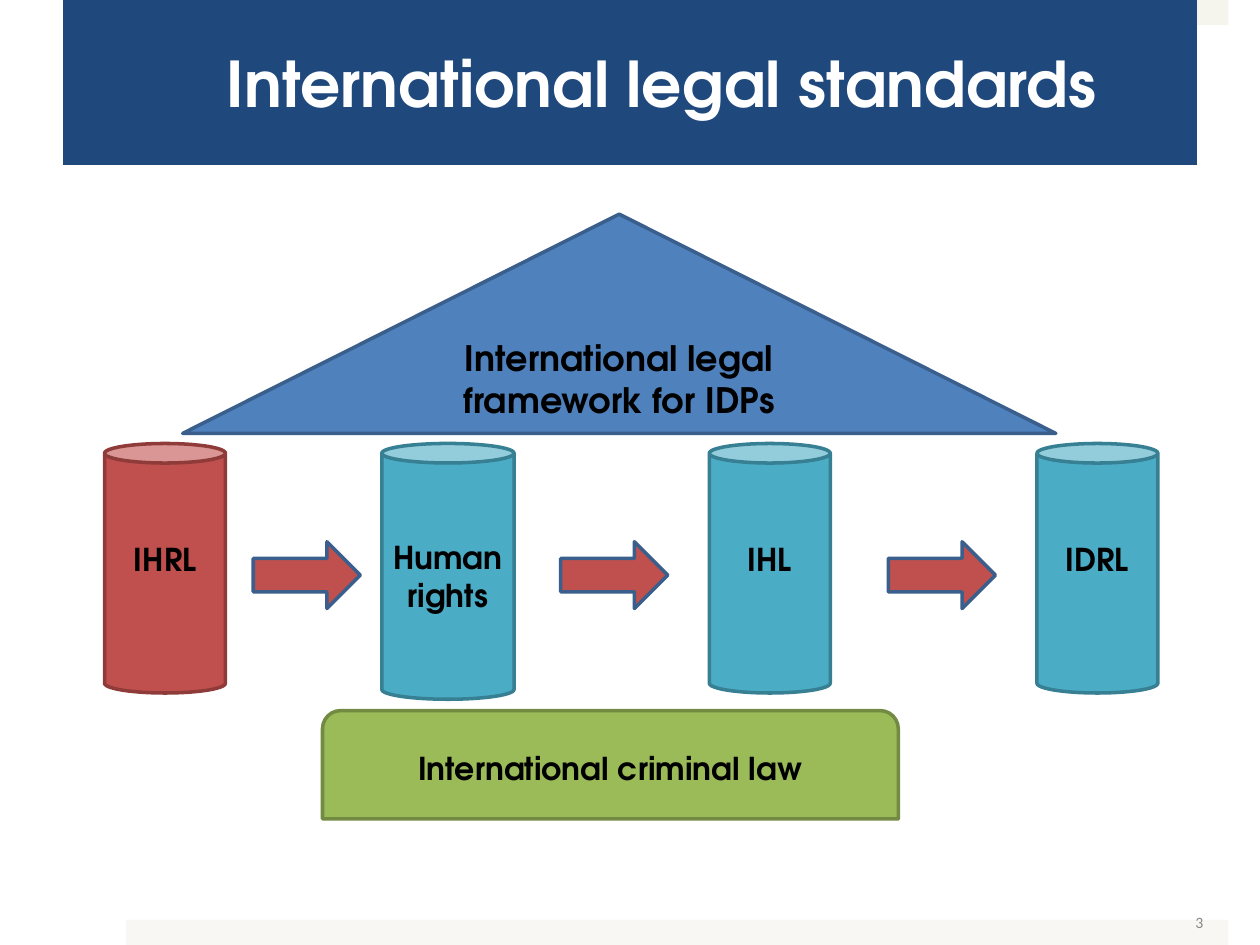
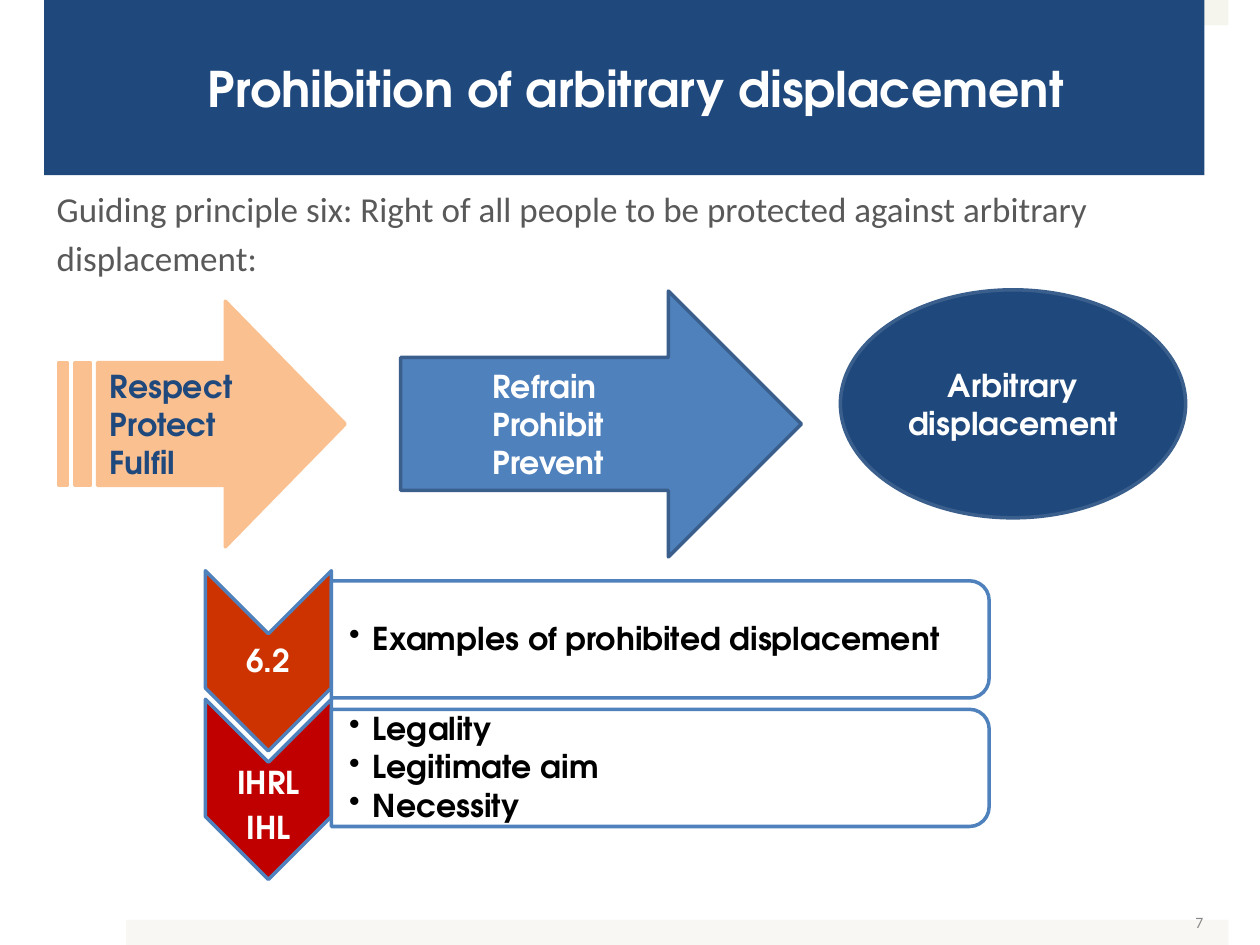
from lxml import etree
from pptx import Presentation
from pptx.dml.color import RGBColor
from pptx.enum.shapes import MSO_SHAPE
from pptx.enum.text import MSO_ANCHOR, MSO_AUTO_SIZE, PP_ALIGN
from pptx.oxml.ns import qn
from pptx.util import Inches, Pt

LEFT, CENTER, RIGHT = PP_ALIGN.LEFT, PP_ALIGN.CENTER, PP_ALIGN.RIGHT
MIDDLE = MSO_ANCHOR.MIDDLE
NO_FIT = MSO_AUTO_SIZE.NONE
RECT, CAN, ROOF = MSO_SHAPE.RECTANGLE, MSO_SHAPE.CAN, MSO_SHAPE.ISOSCELES_TRIANGLE
ROUND_TOP, CHEVRON = MSO_SHAPE.ROUND_2_SAME_RECTANGLE, MSO_SHAPE.CHEVRON
ARROW, STRIPED = MSO_SHAPE.RIGHT_ARROW, MSO_SHAPE.STRIPED_RIGHT_ARROW
OVAL = MSO_SHAPE.OVAL

HEADING_FONT, BODY_FONT = "TeX Gyre Adventor", "Calibri"
WHITE, BLACK = RGBColor(255, 255, 255), RGBColor(0, 0, 0)
NAVY, BLUE, BLUE_EDGE = (RGBColor.from_string(c) for c in ("1F497D", "4F81BD", "3A5F8C"))
TEAL, TEAL_EDGE = RGBColor.from_string("4BACC6"), RGBColor.from_string("377F92")
RED, RED_EDGE = RGBColor.from_string("C0504D"), RGBColor.from_string("8E3B39")
GREEN, GREEN_EDGE = RGBColor.from_string("9BBB59"), RGBColor.from_string("738A42")
PEACH = RGBColor.from_string("FAC090")
ORANGE, CRIMSON = RGBColor.from_string("CC3300"), RGBColor.from_string("C00000")
BODY_GREY, NUMBER_GREY = RGBColor.from_string("595959"), RGBColor.from_string("898989")

BANDS = [((1, 0, 8.75, 0.2), RGBColor.from_string("F5F4ED")),
         ((1, 7.3, 8.75, 0.2), RGBColor.from_string("F8F7F3"))]
NUMBER_BOX = (7.29, 7.12, 2.33, 0.4)

STANDARDS = {"title": "International legal standards", "number": "3",
             "box": (0.5, 0, 9, 1.31), "size": 36}
PROHIBITION = {"title": "Prohibition of arbitrary displacement", "number": "7",
               "box": (0.35, 0, 9.21, 1.39), "size": 28}

FRAMEWORK = ["International legal", "framework for IDPs"]
FOUNDATION = ["International criminal law"]
PILLARS = [
    (["IHRL"], 0.83, 0.96, 1.98, 0.27, RED, RED_EDGE),
    (["Human", "rights"], 3.03, 1.05, 2.03, 0.05, TEAL, TEAL_EDGE),
    (["IHL"], 5.63, 0.96, 1.98, 0.27, TEAL, TEAL_EDGE),
    (["IDRL"], 8.23, 0.96, 1.98, 0.27, TEAL, TEAL_EDGE),
]
PILLAR_TOP, PILLAR_RIM = 3.52, 0.155
STEP_LEFTS = [2.01, 4.45, 7.05]

PRINCIPLE = ("Guiding principle six: Right of all people to be protected "
             "against arbitrary displacement:")
DUTIES = ["Respect", "Protect", "Fulfil"]
ACTIONS = ["Refrain", "Prohibit", "Prevent"]
HARM = ["Arbitrary displacement"]
SOURCES = [
    (["6.2"], 5.04, ORANGE, ["Examples of prohibited displacement"]),
    (["IHRL", "IHL"], 6.19, CRIMSON, ["Legality", "Legitimate aim", "Necessity"]),
]
SOURCE_TOP, SOURCE_PITCH = 4.53, 1.02


def inches(box):
    return [Inches(value) for value in box]


def write(frame, lines, size, color, align=CENTER, font=HEADING_FONT, bold=True,
          spacing=None, after=0, bullet=False):
    frame.text = "\n".join(lines)
    frame.vertical_anchor = MIDDLE
    for paragraph in frame.paragraphs:
        if bullet:
            properties = paragraph._p.get_or_add_pPr()
            properties.set("marL", str(Inches(0.19)))
            properties.set("indent", str(-Inches(0.19)))
            etree.SubElement(properties, qn("a:buChar")).set("char", "•")
        paragraph.alignment = align
        paragraph.space_after = Pt(after)
        if spacing:
            paragraph.line_spacing = spacing
        for run in paragraph.runs:
            run.font.name, run.font.size, run.font.bold = font, Pt(size), bold
            run.font.color.rgb = color


def set_margins(frame, left, top, right, bottom):
    frame.margin_left, frame.margin_top = Inches(left), Inches(top)
    frame.margin_right, frame.margin_bottom = Inches(right), Inches(bottom)


def add_figure(slide, kind, box, fill, edge=None, adjustments=()):
    figure = slide.shapes.add_shape(kind, *inches(box))
    figure.shadow.inherit = False
    figure.fill.solid()
    figure.fill.fore_color.rgb = fill
    if edge is None:
        figure.line.fill.background()
    else:
        figure.line.color.rgb = edge
        figure.line.width = Pt(2)
    for index, value in enumerate(adjustments):
        figure.adjustments[index] = value
    return figure


def add_turned(slide, kind, box, fill, edge):
    """Add a shape turned a quarter clockwise that fills the box as seen."""
    left, top, width, height = box
    shift = (width - height) / 2
    figure = add_figure(slide, kind, (left + shift, top - shift, height, width), fill, edge)
    figure.rotation = 90
    return figure


def add_label(slide, box, margins, lines, size, color, **style):
    frame = slide.shapes.add_textbox(*inches(box)).text_frame
    frame.word_wrap = True
    set_margins(frame, *margins)
    write(frame, lines, size, color, **style)


def place(placeholder, box):
    placeholder.left, placeholder.top, placeholder.width, placeholder.height = inches(box)
    placeholder.text_frame.auto_size = NO_FIT


def add_bands(slide):
    """Move the two pale bands to the back of the slide master."""
    master = slide.slide_layout.slide_master.shapes.element
    for order, (box, color) in enumerate(BANDS):
        band = add_figure(slide, RECT, box, color).element
        band.nvSpPr.cNvPr.set("id", str(100 + order))
        master.insert(2 + order, band)


def start_slide(deck, layout_index, heading):
    slide = deck.slides.add_slide(deck.slide_layouts[layout_index])
    title = slide.shapes.title
    place(title, heading["box"])
    title.fill.solid()
    title.fill.fore_color.rgb = NAVY
    set_margins(title.text_frame, 1.3, 0.05, 0.3, 0.05)
    write(title.text_frame, [heading["title"]], heading["size"], WHITE, LEFT)
    add_label(slide, NUMBER_BOX, (0.07, 0.04, 0.07, 0.04), [heading["number"]], 9,
              NUMBER_GREY, align=RIGHT, font=BODY_FONT, bold=False)
    return slide


def build_standards(deck):
    slide = start_slide(deck, 5, STANDARDS)
    add_bands(slide)
    roof = add_figure(slide, ROOF, (1.45, 1.7, 6.93, 1.74), BLUE, BLUE_EDGE)
    write(roof.text_frame, FRAMEWORK, 20, BLACK)
    roof.text_frame.word_wrap = False
    for lines, left, width, height, lift, fill, edge in PILLARS:
        pillar = add_figure(slide, CAN, (left, PILLAR_TOP, width, height), fill, edge,
                            [PILLAR_RIM / width])
        set_margins(pillar.text_frame, 0.1, 0.05, 0.1, lift)
        write(pillar.text_frame, lines, 18, BLACK)
        pillar.text_frame.word_wrap = False
    for left in STEP_LEFTS:
        add_figure(slide, ARROW, (left, 4.3, 0.85, 0.53), RED, BLUE_EDGE)
    base = add_figure(slide, ROUND_TOP, (2.56, 5.64, 4.57, 0.86), GREEN, GREEN_EDGE)
    write(base.text_frame, FOUNDATION, 18, BLACK)


def build_prohibition(deck):
    slide = start_slide(deck, 1, PROHIBITION)
    principle = slide.placeholders[1]
    place(principle, (0.35, 1.39, 9.21, 5.59))
    frame = principle.text_frame
    write(frame, [PRINCIPLE], 20, BODY_GREY, LEFT, BODY_FONT, False, spacing=1.15)
    frame.vertical_anchor = MSO_ANCHOR.TOP
    frame.paragraphs[0].space_before = Pt(0)
    properties = frame.paragraphs[0]._p.get_or_add_pPr()
    properties.set("marL", "0")
    properties.set("indent", "0")
    etree.SubElement(properties, qn("a:buNone"))

    actions = add_figure(slide, ARROW, (3.18, 2.31, 3.18, 2.11), BLUE, BLUE_EDGE)
    actions.text_frame.margin_left = Inches(0.73)
    write(actions.text_frame, ACTIONS, 18, WHITE, LEFT)
    harm = add_figure(slide, OVAL, (6.67, 2.3, 2.74, 1.81), NAVY, BLUE_EDGE)
    write(harm.text_frame, HARM, 18, WHITE)
    duties = add_figure(slide, STRIPED, (0.47, 2.39, 2.27, 1.95), PEACH, PEACH, (0.5, 0.488))
    write(duties.text_frame, DUTIES, 18, NAVY, LEFT)

    for row, (label, label_top, color, points) in enumerate(SOURCES):
        top = SOURCE_TOP + row * SOURCE_PITCH
        add_turned(slide, CHEVRON, (1.63, top, 1, 1.43), color, BLUE)
        add_label(slide, (1.63, label_top, 1, 0.43), (0.01,) * 4, label, 18, WHITE,
                  spacing=0.9, after=6.3)
        panel = add_turned(slide, ROUND_TOP, (2.63, top + 0.08, 5.22, 0.93), WHITE, BLUE)
        tint = panel.element.spPr.find(qn("a:solidFill"))[0]
        etree.SubElement(tint, qn("a:alpha")).set("val", "90000")
        add_label(slide, (2.63, top + 0.13, 5.18, 0.84), (0.14, 0.01, 0.01, 0.01), points,
                  18, BLACK, align=LEFT, spacing=0.9, after=2.7, bullet=True)


def main():
    deck = Presentation()
    deck.slide_width, deck.slide_height = Inches(10), Inches(7.5)
    build_standards(deck)
    build_prohibition(deck)
    deck.save("out.pptx")


if __name__ == "__main__":
    main()
